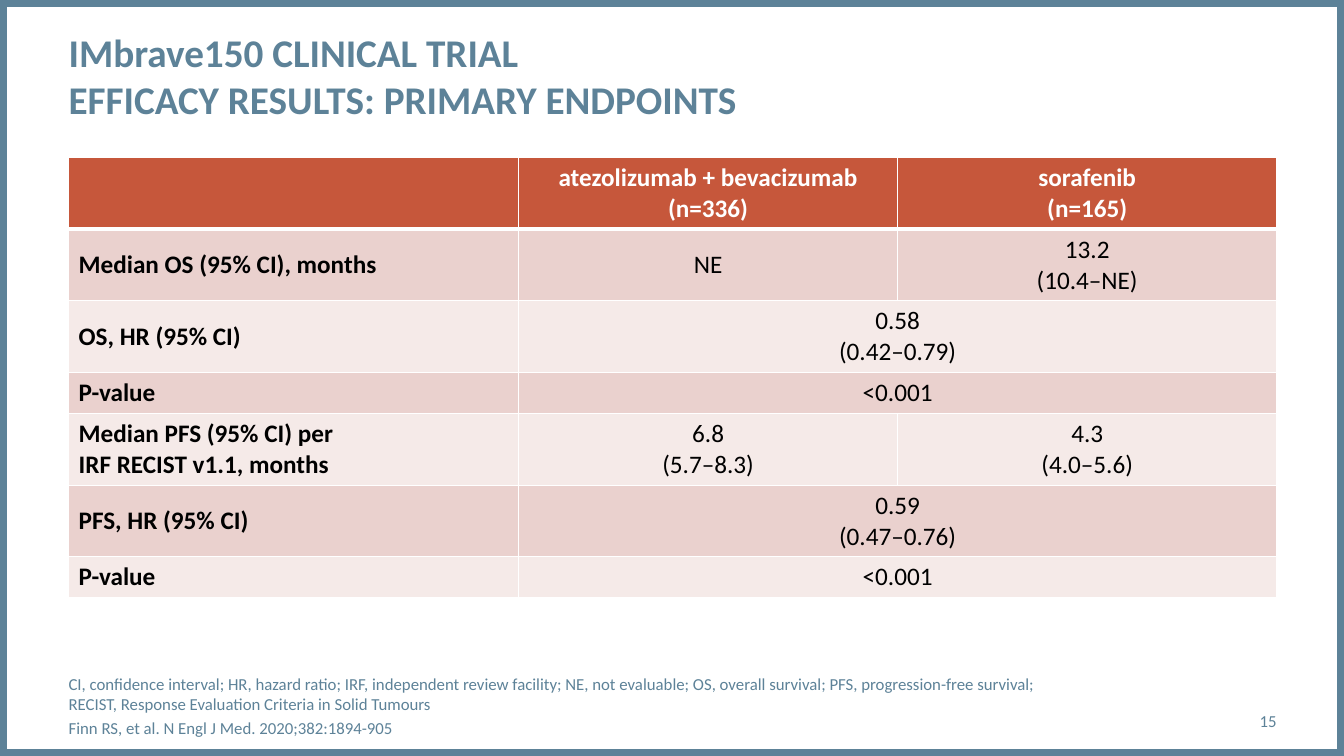
import pptx
import pptx.util
import pptx.dml.color
import pptx.enum.shapes
import pptx.enum.text
import pptx.oxml
import pptx.oxml.ns
from dataclasses import dataclass

Pt = pptx.util.Pt
PP_ALIGN = pptx.enum.text.PP_ALIGN
MSO_ANCHOR = pptx.enum.text.MSO_ANCHOR

# Content: "\v" is a line break, "\n" a new paragraph
TITLE = "IMbrave150 CLINICAL TRIAL\vEFFICACY RESULTS: PRIMARY ENDPOINTS"
HEADER = ("", "atezolizumab + bevacizumab\v(n=336)", "sorafenib\v(n=165)")
# A row with a single result spans both treatment columns
ENDPOINTS = [
    ("Median OS (95% CI), months", "NE", "13.2\n(10.4–NE)"),
    ("OS, HR (95% CI)", "0.58\n(0.42–0.79)"),
    ("P-value", "<0.001"),
    ("Median PFS (95% CI) per\vIRF RECIST v1.1, months", "6.8\n(5.7–8.3)", "4.3\n(4.0–5.6)"),
    ("PFS, HR (95% CI)", "0.59\v(0.47–0.76)"),
    ("P-value", "<0.001"),
]
FOOTNOTE = (
    "CI, confidence interval; HR, hazard ratio; IRF, independent review facility; "
    "NE, not evaluable; OS, overall survival; PFS, progression-free survival;\v"
    "RECIST, Response Evaluation Criteria in Solid Tumours\n"
    "Finn RS, et al. N Engl J Med. 2020;382:1894-905"
)
PAGE = "15"


@dataclass(frozen=True)
class Theme:
    font: str = "Calibri"
    blue: str = "5D8298"
    header: str = "C6573B"
    bands: tuple = ("EAD1CE", "F5EAE8")
    white: str = "FFFFFF"
    black: str = "000000"
    title: int = 28
    table: int = 18
    note: int = 12


T = Theme()

# Layout in points
W, H = 960, 540
LEFT = 49
TABLE_TOP = 112.5
COLS = (321.4, 270.8, 270.8)
SINGLE, DOUBLE = 29.3, 51.2


def rgb(color):
    return pptx.dml.color.RGBColor.from_string(color)


def write(tf, text, size, color, bold=False, align=PP_ALIGN.LEFT, gap=0):
    tf.text = text
    for i, p in enumerate(tf.paragraphs):
        p.alignment = align
        p.line_spacing = 1.0
        p.space_before = Pt(gap if i else 0)
        for r in p.runs:
            r.font.name, r.font.size, r.font.bold = T.font, Pt(size), bold
            r.font.color.rgb = rgb(color)


def set_frame(tf, anchor):
    tf.word_wrap = True
    tf.auto_size = pptx.enum.text.MSO_AUTO_SIZE.NONE
    tf.vertical_anchor = anchor
    tf.margin_left = tf.margin_right = tf.margin_top = tf.margin_bottom = 0


def add_text(s, box, text, align=PP_ALIGN.LEFT, gap=0):
    sp = s.shapes.add_textbox(*map(Pt, box))
    set_frame(sp.text_frame, MSO_ANCHOR.MIDDLE)
    write(sp.text_frame, text, T.note, T.blue, align=align, gap=gap)


def set_borders(cell, widths):
    tcPr = cell._tc.get_or_add_tcPr()
    for side, width in zip("LRTB", widths):
        tcPr.append(pptx.oxml.parse_xml(
            f'<a:ln{side} {pptx.oxml.ns.nsdecls("a")} w="{Pt(width)}"><a:solidFill>'
            f'<a:srgbClr val="{T.white}"/></a:solidFill></a:ln{side}>'))


def add_endpoint_table(s):
    rows = [HEADER] + ENDPOINTS
    heights = [DOUBLE if any("\n" in t or "\v" in t for t in row) else SINGLE for row in rows]
    box = (LEFT, TABLE_TOP, sum(COLS), sum(heights))
    table = s.shapes.add_table(len(rows), len(COLS), *map(Pt, box)).table
    for col, width in zip(table.columns, COLS):
        col.width = Pt(width)
    for i, row in enumerate(rows):
        table.rows[i].height = Pt(heights[i])
        top = 3 if i == 1 else 1
        bottom = 3 if i == 0 else 1
        for j in range(len(COLS)):
            cell = table.cell(i, j)
            set_borders(cell, (1, 1, top, bottom))
            cell.fill.solid()
            cell.fill.fore_color.rgb = rgb(T.bands[(i - 1) % 2] if i else T.header)
            cell.vertical_anchor = MSO_ANCHOR.MIDDLE
        if len(row) == 2:
            table.cell(i, 1).merge(table.cell(i, 2))
        for j, text in enumerate(row):
            write(table.cell(i, j).text_frame, text, T.table, T.black if i else T.white,
                  bold=i == 0 or j == 0, align=PP_ALIGN.CENTER if j else PP_ALIGN.LEFT)


def main():
    prs = pptx.Presentation()
    prs.slide_width, prs.slide_height = Pt(W), Pt(H)
    s = prs.slides.add_slide(prs.slide_layouts[5])

    # Title
    sp = s.shapes.title
    sp.left, sp.top, sp.width, sp.height = map(Pt, (LEFT, 20, 688, 68))
    set_frame(sp.text_frame, MSO_ANCHOR.TOP)
    write(sp.text_frame, TITLE, T.title, T.blue, bold=True)

    # Border round the slide, behind the title
    sp = s.shapes.add_shape(pptx.enum.shapes.MSO_SHAPE.RECTANGLE, 0, 0, Pt(W), Pt(H))
    sp.shadow.inherit = False
    sp.fill.background()
    sp.line.color.rgb = rgb(T.blue)
    sp.line.width = Pt(10)
    s.shapes.title._element.addprevious(sp._element)

    # Results, footnote and page number
    add_endpoint_table(s)
    add_text(s, (LEFT, 489.6, 845, 29), FOOTNOTE, gap=3)
    add_text(s, (828, 500.4, 84, 29), PAGE, align=PP_ALIGN.RIGHT)

    prs.save("out.pptx")


if __name__ == "__main__":
    main()
